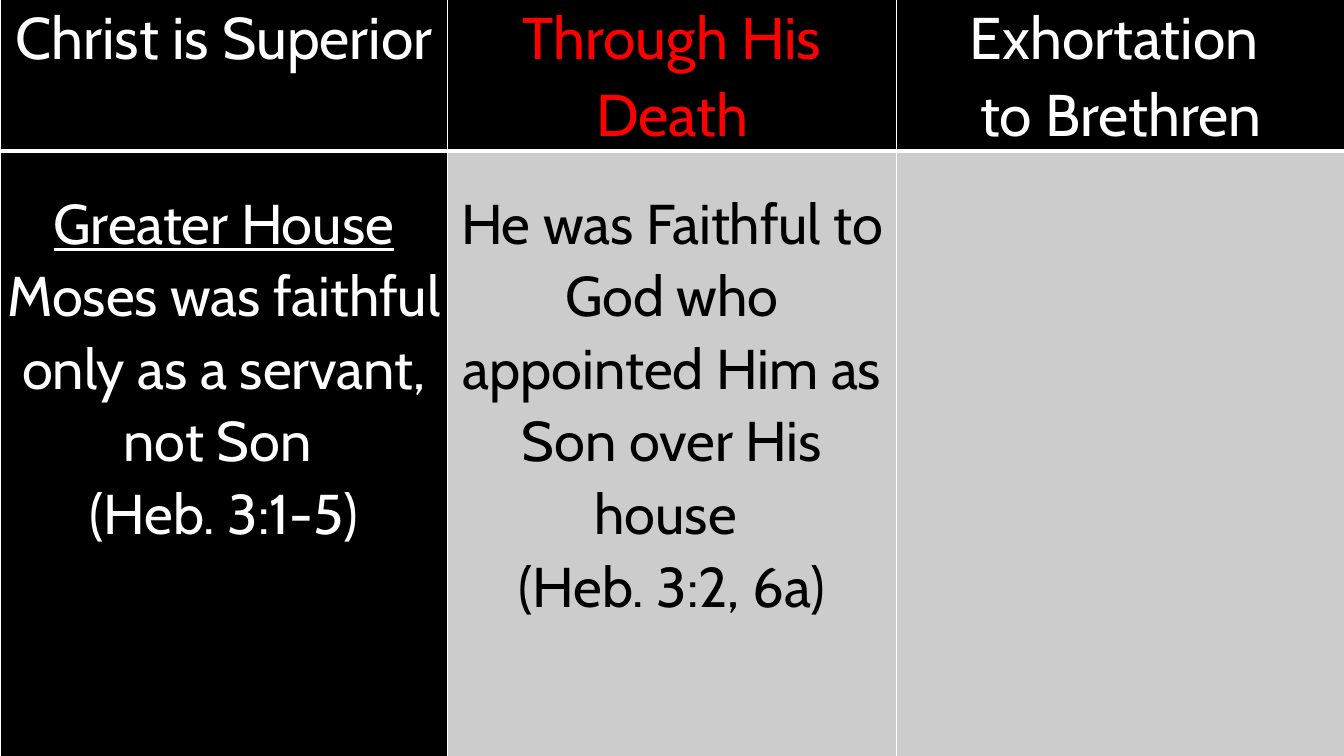
from dataclasses import dataclass

from lxml import etree
from pptx import Presentation
from pptx.dml.color import RGBColor
from pptx.enum.text import PP_ALIGN
from pptx.oxml.ns import qn
from pptx.table import _Cell
from pptx.util import Inches, Pt

CENTER = PP_ALIGN.CENTER
FONT = "Cabin"
BLACK, WHITE, RED, GRAY = "000000", "FFFFFF", "FF0000", "CCCCCC"


@dataclass
class CellText:
    lines: tuple[str, ...]
    color: str
    fill: str
    underlined: str = ""


@dataclass
class RowStyle:
    height: float
    size: int
    margin_top: float
    borders: dict[str, int]


HEADER = RowStyle(1.68, 42, 0.18, {"L": 1, "R": 1, "T": 1, "B": 3})
BODY = RowStyle(6.33, 40, 0.34, {"L": 1, "R": 1, "T": 3, "B": 1})

ROWS = [
    (HEADER, [
        CellText(("Christ is Superior",), WHITE, BLACK),
        CellText(("Through His Death",), RED, BLACK),
        CellText(("Exhortation ", "to Brethren"), WHITE, BLACK),
    ]),
    (BODY, [
        CellText(("Greater House",
                  "Moses was faithful only as a servant, not Son ",
                  "(Heb. 3:1-5)"), WHITE, BLACK, "Greater House"),
        CellText(("He was Faithful to God who appointed Him as Son over His house ",
                  "(Heb. 3:2, 6a)"), BLACK, GRAY),
        CellText((), BLACK, GRAY),
    ]),
]
COLUMN_WIDTHS = (4.44, 4.45, 4.45)


def rgb(color: str) -> RGBColor:
    return RGBColor.from_string(color)


def set_borders(cell: _Cell, borders: dict[str, int]) -> None:
    tc_pr = cell._tc.get_or_add_tcPr()
    for i, (side, width) in enumerate(borders.items()):
        ln = etree.Element(qn(f"a:ln{side}"), w=str(Pt(width)))
        fill = etree.SubElement(ln, qn("a:solidFill"))
        etree.SubElement(fill, qn("a:srgbClr"), val=WHITE)
        tc_pr.insert(i, ln)


def fill_cell(cell: _Cell, content: CellText, style: RowStyle) -> None:
    cell.fill.solid()
    cell.fill.fore_color.rgb = rgb(content.fill)
    cell.margin_left = cell.margin_right = Inches(0.07)
    cell.margin_top = Inches(style.margin_top)
    cell.margin_bottom = 0
    set_borders(cell, style.borders)
    tf = cell.text_frame
    for i, line in enumerate(content.lines):
        p = tf.paragraphs[0] if i == 0 else tf.add_paragraph()
        p.text = line
        p.alignment = CENTER
        p.line_spacing = 1.07
        p.font.name = FONT
        p.font.size = Pt(style.size)
        p.font.color.rgb = rgb(content.color)
        p.font.underline = line == content.underlined


def main() -> None:
    prs = Presentation()
    prs.slide_width, prs.slide_height = Inches(13.33), Inches(7.5)
    s = prs.slides.add_slide(prs.slide_layouts[6])
    s.background.fill.solid()
    s.background.fill.fore_color.rgb = rgb(BLACK)

    table = s.shapes.add_table(len(ROWS), len(COLUMN_WIDTHS), 0, Inches(-0.2),
                               Inches(13.33), Inches(8)).table
    table.first_row = table.horz_banding = False
    for column, width in zip(table.columns, COLUMN_WIDTHS):
        column.width = Inches(width)
    for row, (style, contents) in zip(table.rows, ROWS):
        row.height = Inches(style.height)
        for cell, content in zip(row.cells, contents):
            fill_cell(cell, content, style)

    prs.save("out.pptx")


if __name__ == "__main__":
    main()
